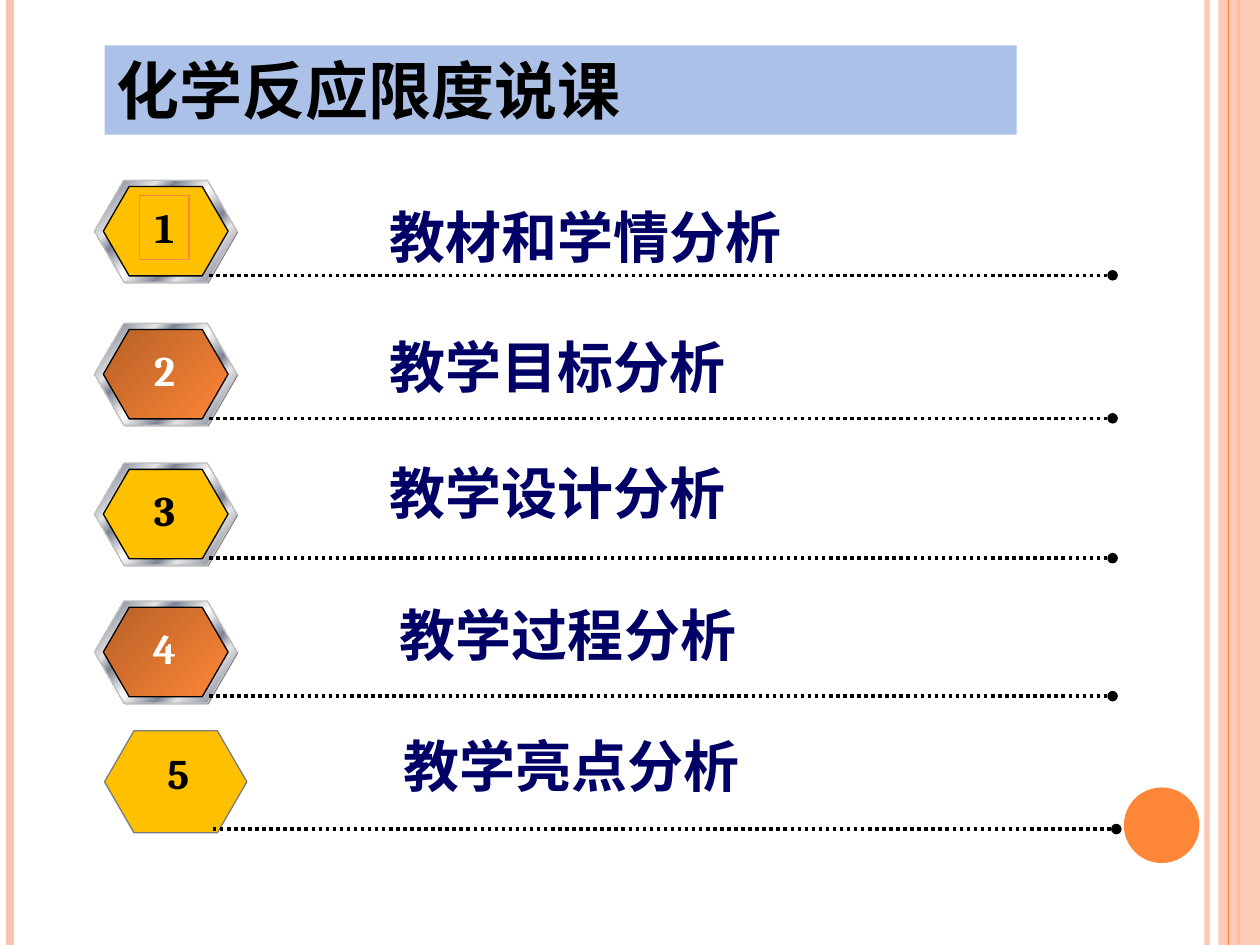
from dataclasses import dataclass

from lxml import etree
from pptx import Presentation
from pptx import util as u
from pptx.dml.color import RGBColor
from pptx.enum import dml, shapes, text
from pptx.oxml.ns import qn

# Grid of 100 columns by 75 rows covering the slide
WIDTH, HEIGHT = u.Inches(10), u.Inches(7.5)
COLUMN, ROW = WIDTH / 100, HEIGHT / 75

PEACH = RGBColor(0xFE, 0xC3, 0xAE)
ORANGE = RGBColor(0xFE, 0x86, 0x37)
BROWN = RGBColor(0xB6, 0x60, 0x27)
GOLD = RGBColor(0xFF, 0xC0, 0x00)
NAVY = RGBColor(0x00, 0x00, 0x66)
SKY = RGBColor(0xAC, 0xC1, 0xE8)
BLACK = RGBColor(0x00, 0x00, 0x00)
WHITE = RGBColor(0xFF, 0xFF, 0xFF)
GREY = RGBColor(0x80, 0x80, 0x80)
SILVER = RGBColor(0xC0, 0xC0, 0xC0)
SLATE = RGBColor(0x77, 0x7C, 0x84)
LIGHT = RGBColor(0xE6, 0xE6, 0xE6)
STEEL = RGBColor(0x7D, 0x84, 0x96)

COPPER = [(0, BROWN), (100, ORANGE)]
METAL = [(0, LIGHT), (8, STEEL), (26, LIGHT), (34, STEEL), (46, LIGHT), (50, WHITE),
         (54, LIGHT), (66, STEEL), (74, LIGHT), (92, STEEL), (100, LIGHT)]
HEXAGON = shapes.MSO_SHAPE.HEXAGON
RECTANGLE = shapes.MSO_SHAPE.RECTANGLE
CJK_FONT = "Noto Sans CJK SC"
LEFT, CENTER = text.PP_ALIGN.LEFT, text.PP_ALIGN.CENTER


@dataclass(frozen=True)
class Box:
    left: float
    top: float
    width: float
    height: float

    def lengths(self) -> tuple[int, int, int, int]:
        return (round(self.left * COLUMN), round(self.top * ROW),
                round(self.width * COLUMN), round(self.height * ROW))


@dataclass(frozen=True)
class TextStyle:
    size: float
    font: str
    color: RGBColor
    align: text.PP_ALIGN = LEFT
    wrap: bool = True


@dataclass(frozen=True)
class Topic:
    number: str
    top: float
    caption: str
    caption_box: Box
    align: text.PP_ALIGN
    framed: bool = True


@dataclass(frozen=True)
class Rule:
    column: float
    color: RGBColor
    weight: float
    opacity: int = 100


TOPICS = [
    Topic("1", 14.3, "教材和学情分析", Box(29.9, 15.6, 40.6, 6.4), LEFT),
    Topic("2", 25.65, "教学目标分析", Box(29.9, 25.9, 42.1, 6.4), LEFT),
    Topic("3", 36.75, "教学设计分析", Box(23.8, 35.9, 41, 6.4), CENTER),
    Topic("4", 47.7, "教学过程分析", Box(24.6, 47.2, 41, 6.4), CENTER),
    Topic("5", 58, "教学亮点分析", Box(28.2, 57.6, 34.4, 6.4), CENTER, framed=False),
]
RULES_BEHIND = [Rule(95.8, PEACH, 3, 93), Rule(0.8, PEACH, 4.5), Rule(98.3, ORANGE, 1.5)]
RULE_IN_FRONT = Rule(97.5, ORANGE, 0.75)


def set_opacity(shape, percent: int) -> None:
    for color in shape._element.spPr.iter(qn("a:srgbClr")):
        etree.SubElement(color, qn("a:alpha"), val=str(percent * 1000))


def set_gradient(shape, stops: list) -> None:
    """Fill along the diagonal from top left to bottom right."""
    shape.fill.gradient()
    shape.fill.gradient_angle = 315
    stop_list = shape._element.spPr.find(".//" + qn("a:gsLst"))
    for stop in list(stop_list):
        stop_list.remove(stop)
    for position, color in stops:
        stop = etree.SubElement(stop_list, qn("a:gs"), pos=str(position * 1000))
        etree.SubElement(stop, qn("a:srgbClr"), val=str(color))


def add_shape(slide, kind, box: Box, fill=None, outline: RGBColor | None = None):
    """Fill is a colour, a list of gradient stops, or None."""
    shape = slide.shapes.add_shape(kind, *box.lengths())
    shape.shadow.inherit = False
    if fill is None:
        shape.fill.background()
    elif isinstance(fill, list):
        set_gradient(shape, fill)
    else:
        shape.fill.solid()
        shape.fill.fore_color.rgb = fill
    if outline is None:
        shape.line.fill.background()
    else:
        shape.line.color.rgb = outline
        shape.line.width = u.Pt(0.75)
    if kind == HEXAGON:
        shape.adjustments[0] = 0.289
    return shape


def add_line(slide, start: tuple, end: tuple, color: RGBColor, weight: float):
    line = slide.shapes.add_connector(
        shapes.MSO_CONNECTOR.STRAIGHT,
        round(start[0] * COLUMN), round(start[1] * ROW),
        round(end[0] * COLUMN), round(end[1] * ROW))
    line.line.color.rgb = color
    line.line.width = u.Pt(weight)
    etree.SubElement(line._element.spPr, qn("a:effectLst"))
    return line


def add_rule(slide, rule: Rule) -> None:
    line = add_line(slide, (rule.column, 0), (rule.column, 75), rule.color, rule.weight)
    if rule.opacity < 100:
        set_opacity(line, rule.opacity)


def write(shape, wording: str, style: TextStyle) -> None:
    frame = shape.text_frame
    frame.text = wording
    frame.word_wrap = style.wrap
    frame.vertical_anchor = text.MSO_ANCHOR.TOP
    paragraph = frame.paragraphs[0]
    paragraph.alignment = style.align
    run = paragraph.runs[0]
    run.font.size = u.Pt(style.size)
    run.font.name = style.font
    run.font.bold = True
    run.font.color.rgb = style.color
    etree.SubElement(run._r.get_or_add_rPr(), qn("a:ea"), typeface=CJK_FONT)


def add_text(slide, box: Box, wording: str, style: TextStyle) -> None:
    write(slide.shapes.add_textbox(*box.lengths()), wording, style)


def add_topic(slide, topic: Topic) -> None:
    dark = topic.number in ("2", "4")
    top = topic.top
    if topic.framed:
        add_shape(slide, HEXAGON, Box(7.6, top + 0.1, 11.3, 8.1), GREY)
        add_shape(slide, HEXAGON, Box(7.5, top, 11.3, 8.1), METAL, SILVER)
        add_shape(slide, HEXAGON, Box(8.2, top + 0.5, 9.9, 7.1), COPPER if dark else GOLD, BLACK)
        line_left, line_top = 16.6, top + 7.55
        number_box = Box(11.1, top + 1.2, 3.9, 5.1)
    else:
        add_shape(slide, HEXAGON, Box(8.3, top, 11.3, 8.1), GOLD, SLATE)
        line_left, line_top = 16.9, top + 7.8
        number_box = Box(12.3, top + 0.8, 3.7, 5.1)

    line = add_line(slide, (line_left, line_top), (line_left + 71.7, line_top), BLACK, 2)
    line.line.dash_style = dml.MSO_LINE.ROUND_DOT
    etree.SubElement(line.line._get_or_add_ln(), qn("a:tailEnd"), type="oval")

    number_style = TextStyle(24, "Cambria", WHITE if dark else BLACK, CENTER, wrap=False)
    if topic.number == "1":
        write(add_shape(slide, RECTANGLE, number_box, outline=ORANGE), topic.number, number_style)
    else:
        add_text(slide, number_box, topic.number, number_style)
    add_text(slide, topic.caption_box, topic.caption, TextStyle(32, "Arial", NAVY, topic.align))


def main() -> None:
    presentation = Presentation()
    presentation.slide_width, presentation.slide_height = WIDTH, HEIGHT
    slide = presentation.slides.add_slide(presentation.slide_layouts[6])

    for rule in RULES_BEHIND:
        add_rule(slide, rule)
    set_opacity(add_shape(slide, RECTANGLE, Box(96.7, 0, 3.3, 75), PEACH), 87)
    add_rule(slide, RULE_IN_FRONT)
    add_shape(slide, shapes.MSO_SHAPE.OVAL, Box(89.2, 62.5, 6, 6), ORANGE)

    title = add_shape(slide, RECTANGLE, Box(8.3, 3.6, 72.4, 7.1), SKY)
    write(title, "化学反应限度说课", TextStyle(36, CJK_FONT, BLACK))
    for topic in TOPICS:
        add_topic(slide, topic)
    presentation.save("out.pptx")


if __name__ == "__main__":
    main()
